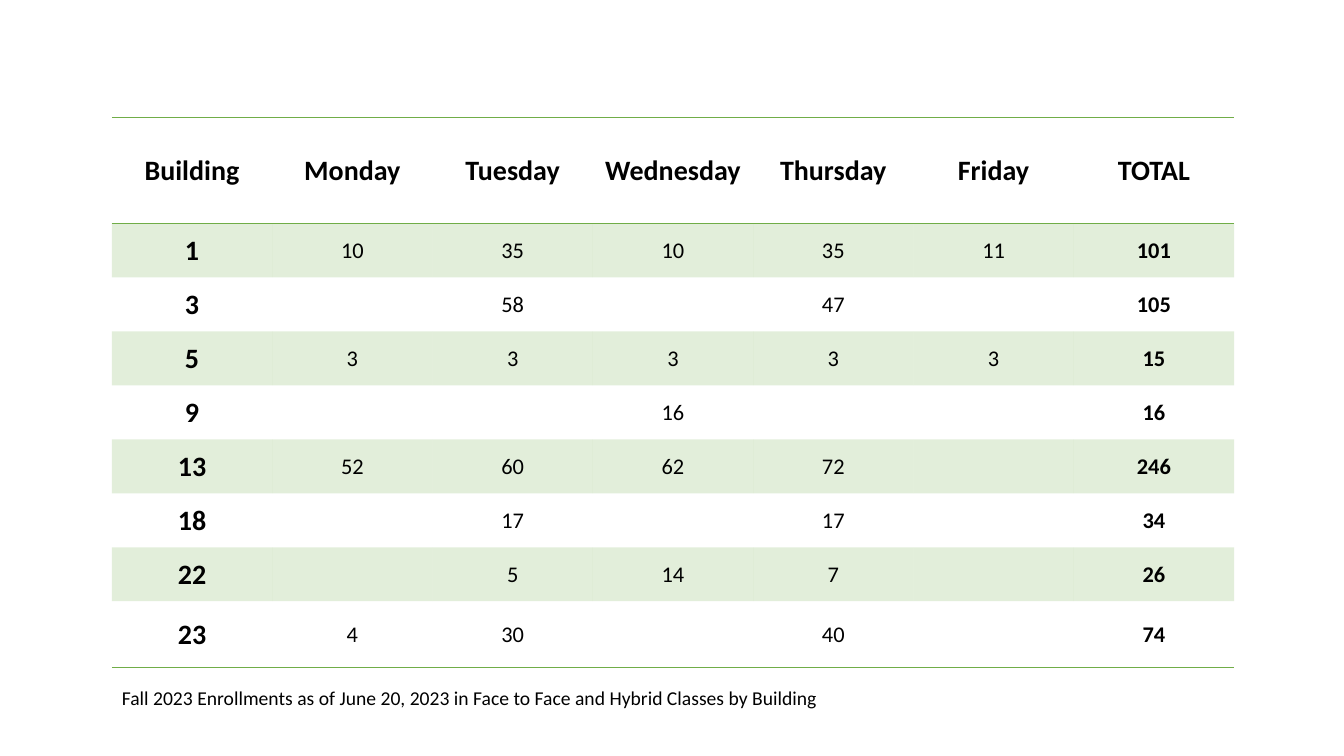
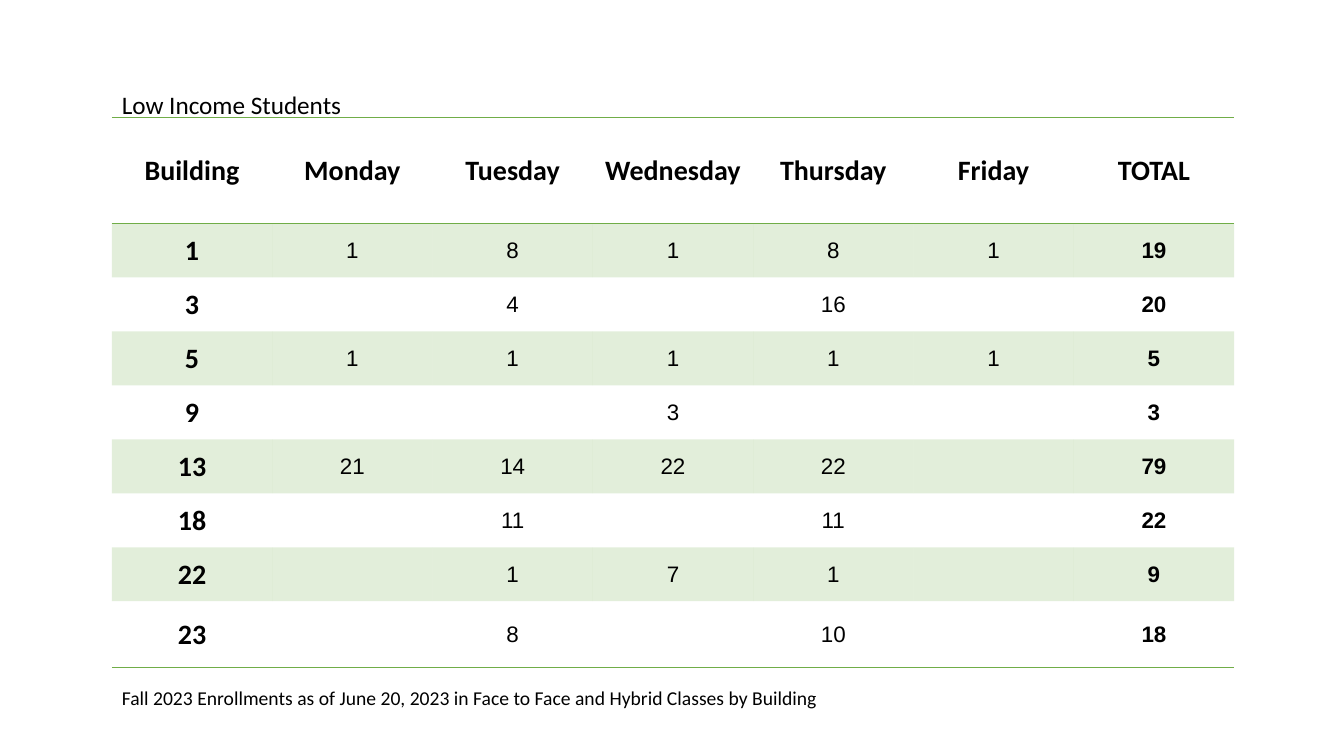
from lxml import etree
from pptx import Presentation
from pptx.dml.color import RGBColor
from pptx.enum import text
from pptx.oxml import ns
from pptx.util import Cm, Pt

# Shared look
GREEN, BLACK = "70AD47", "000000"
HEADING_FONT = "Calibri"
LEFT, TABLE_TOP = 2.82, 2.96
COLUMN_WIDTH = 4.04
ROW_HEIGHTS = [2.67] + [1.36] * 7 + [1.66]
PLAIN_TABLE_STYLE = "{2D5ABB26-0587-4C30-8999-92F81FD0307C}"
HEADER = ["Building", "Monday", "Tuesday", "Wednesday", "Thursday", "Friday", "TOTAL"]
CAPTION = "Fall 2023 Enrollments as of June 20, 2023 in Face to Face and Hybrid Classes by Building"

# Building number, then Monday to Friday; None leaves a cell empty
ALL_STUDENTS = [
    (1, 10, 35, 10, 35, 11),
    (3, None, 58, None, 47, None),
    (5, 3, 3, 3, 3, 3),
    (9, None, None, 16, None, None),
    (13, 52, 60, 62, 72, None),
    (18, None, 17, None, 17, None),
    (22, None, 5, 14, 7, None),
    (23, 4, 30, None, 40, None),
]
LOW_INCOME = [
    (1, 1, 8, 1, 8, 1),
    (3, None, 4, None, 16, None),
    (5, 1, 1, 1, 1, 1),
    (9, None, None, 3, None, None),
    (13, 21, 14, 22, 22, None),
    (18, None, 11, None, 11, None),
    (22, None, 1, 7, 1, None),
    (23, None, 8, None, 10, None),
]
# Title and its place, font of the figures, rows
SLIDES = [(None, "Calibri", ALL_STUDENTS), ("Low Income Students", "Arial", LOW_INCOME)]


def style_font(paragraph, size, name=HEADING_FONT, bold=False):
    font = paragraph.font
    font.size, font.name, font.bold = Pt(size), name, bold
    font.color.rgb = RGBColor.from_string(BLACK)


def add_label(slide, words, top, width, height, size):
    label = slide.shapes.add_textbox(Cm(LEFT), Cm(top), Cm(width), Cm(height))
    label.text_frame.word_wrap = False
    label.text_frame.auto_size = text.MSO_AUTO_SIZE.SHAPE_TO_FIT_TEXT
    label.text_frame.text = words
    style_font(label.text_frame.paragraphs[0], size)


presentation = Presentation()
presentation.slide_width, presentation.slide_height = Cm(33.87), Cm(19.05)

for title, figure_font, buildings in SLIDES:
    slide = presentation.slides.add_slide(presentation.slide_layouts[6])

    # Table frame
    rows = [HEADER] + [(*row, sum(filter(None, row[1:]))) for row in buildings]
    table = slide.shapes.add_table(
        len(rows), len(HEADER), Cm(LEFT), Cm(TABLE_TOP),
        Cm(COLUMN_WIDTH * len(HEADER)), Cm(sum(ROW_HEIGHTS))).table
    table._tbl.tblPr.find(ns.qn("a:tableStyleId")).text = PLAIN_TABLE_STYLE
    table.first_row = table.horz_banding = False
    for column in table.columns:
        column.width = Cm(COLUMN_WIDTH)
    for table_row, height in zip(table.rows, ROW_HEIGHTS):
        table_row.height = Cm(height)

    for row_index, row in enumerate(rows):
        is_header, is_last = row_index == 0, row_index == len(rows) - 1
        edges = ["a:lnT"] * is_header + ["a:lnB"] * (is_header or is_last)
        for column_index, value in enumerate(row):
            cell = table.cell(row_index, column_index)

            # Cell text
            cell.margin_left = cell.margin_right = cell.margin_top = Cm(0.02)
            cell.margin_bottom = 0
            cell.vertical_anchor = text.MSO_ANCHOR.MIDDLE
            if value is not None:
                cell.text = str(value)
            paragraph = cell.text_frame.paragraphs[0]
            paragraph.alignment = text.PP_ALIGN.CENTER
            if is_header or column_index == 0:
                style_font(paragraph, 20, bold=True)
            else:
                style_font(paragraph, 16, figure_font, bold=column_index == len(HEADER) - 1)

            # Rules around the header and under the last row
            properties = cell._tc.get_or_add_tcPr()
            for edge in edges:
                line = etree.SubElement(properties, ns.qn(edge), w=str(Pt(1)))
                line_fill = etree.SubElement(line, ns.qn("a:solidFill"))
                etree.SubElement(line_fill, ns.qn("a:srgbClr"), val=GREEN)

            # Translucent band on every other building
            if row_index % 2:
                cell.fill.solid()
                cell.fill.fore_color.rgb = RGBColor.from_string(GREEN)
                color = properties.find(ns.qn("a:solidFill"))[0]
                etree.SubElement(color, ns.qn("a:alpha"), val="20000")
            else:
                cell.fill.background()

    # Caption and title
    add_label(slide, CAPTION, 17.17, 18.21, 0.86, 14)
    if title:
        add_label(slide, title, 2.13, 6.12, 1.02, 18)

presentation.save("out.pptx")
